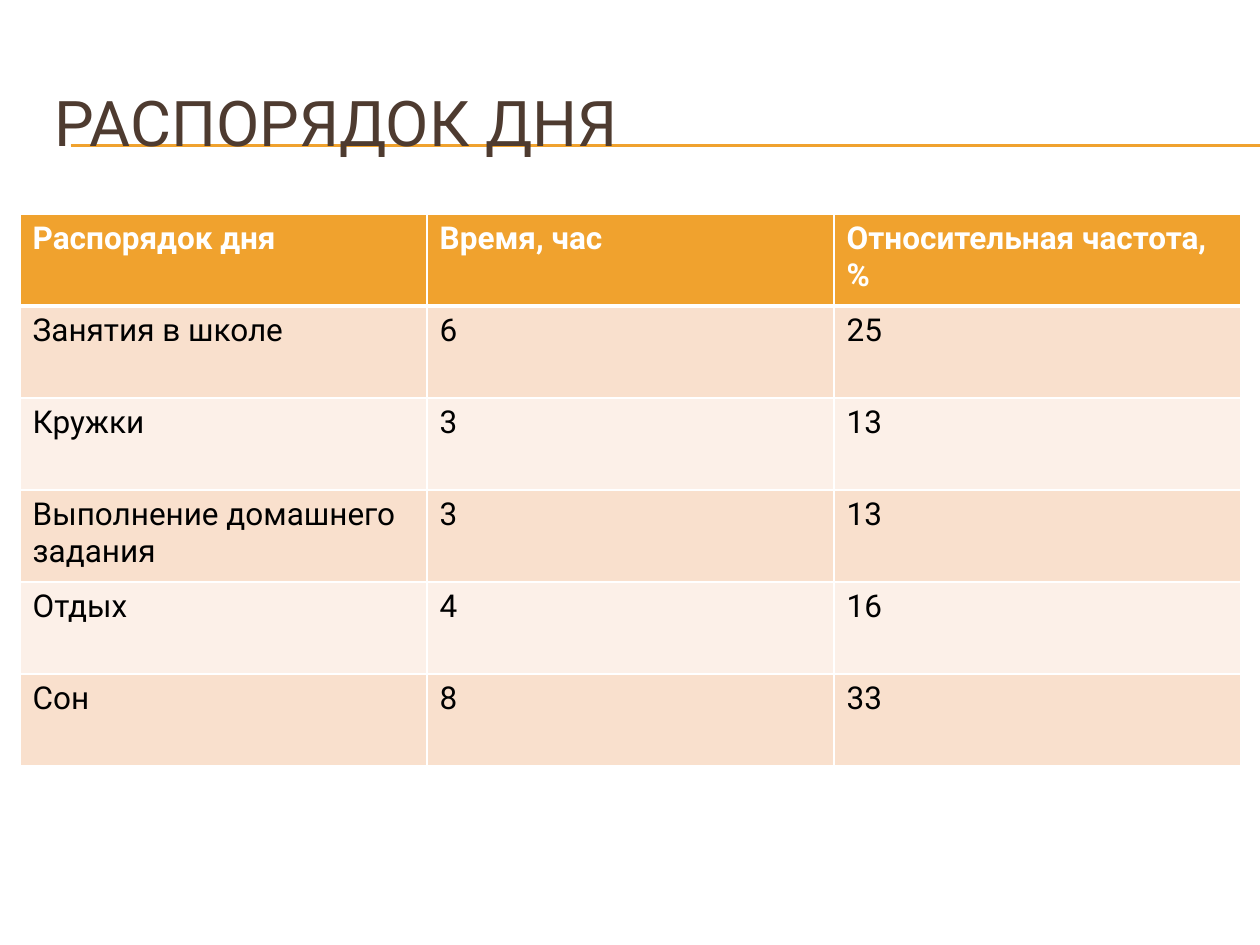
from lxml import etree
from pptx import Presentation
from pptx.dml.color import RGBColor
from pptx.enum.shapes import MSO_CONNECTOR
from pptx.enum.text import MSO_ANCHOR, PP_ALIGN
from pptx.oxml.ns import qn
from pptx.util import Inches, Pt

STRAIGHT = MSO_CONNECTOR.STRAIGHT
MIDDLE, LEFT = MSO_ANCHOR.MIDDLE, PP_ALIGN.LEFT

TITLE = "РАСПОРЯДОК ДНЯ"
ROWS = [
    ("Распорядок дня", "Время, час", "Относительная частота, %"),
    ("Занятия в школе", "6", "25"),
    ("Кружки", "3", "13"),
    ("Выполнение домашнего задания", "3", "13"),
    ("Отдых", "4", "16"),
    ("Сон", "8", "33"),
]

COLORS = {
    "accent": "F0A22E",
    "title": "4E3B30",
    "white": "FFFFFF",
    "text": "000000",
    "odd": "F9E0CD",
    "even": "FCF0E8",
}
TITLE_FONT = {"name": "Roboto", "size": Pt(36), "bold": False}
HEADER_FONT = {"name": "Roboto", "size": Pt(18), "bold": True}
BODY_FONT = {**HEADER_FONT, "bold": False}

TITLE_BOX = (0.33, 0.5, 9.5, 0.92)
RULE_LEFT, RULE_RIGHT, RULE_YS = 0.56, 10, (1.15, 1.16)
TABLE_LEFT, TABLE_TOP = 0.16, 1.7
COL_WIDTH, ROW_HEIGHT = 3.23, 0.73
THIN, THICK = Pt(1), Pt(3)


def rgb(name):
    return RGBColor.from_string(COLORS[name])


def write(tf, text, font, color):
    p = tf.paragraphs[0]
    p.alignment = LEFT
    r = p.add_run()
    r.text = text
    for key, value in font.items():
        setattr(r.font, key, value)
    r.font.color.rgb = rgb(color)


def add_title(s):
    title = s.shapes.title
    title.left, title.top, title.width, title.height = map(Inches, TITLE_BOX)
    title.text_frame.vertical_anchor = MIDDLE
    title.text_frame.word_wrap = True
    write(title.text_frame, TITLE, TITLE_FONT, "title")


def add_rule(s, y):
    """Draw a horizontal line behind the title."""
    line = s.shapes.add_connector(
        STRAIGHT, Inches(RULE_LEFT), Inches(y), Inches(RULE_RIGHT), Inches(y))
    line.line.color.rgb = rgb("accent")
    line.line.width = Pt(0.75)
    etree.SubElement(line.element.spPr, qn("a:effectLst"))
    s.shapes.title.element.addprevious(line.element)


def set_borders(cell, top, bottom):
    tcPr = cell._tc.get_or_add_tcPr()
    widths = {"a:lnL": THIN, "a:lnR": THIN, "a:lnT": top, "a:lnB": bottom}
    for tag, width in widths.items():
        ln = etree.SubElement(tcPr, qn(tag), w=str(width))
        fill = etree.SubElement(ln, qn("a:solidFill"))
        etree.SubElement(fill, qn("a:srgbClr"), val=COLORS["white"])


def add_schedule(s):
    n_rows, n_cols = len(ROWS), len(ROWS[0])
    table = s.shapes.add_table(
        n_rows, n_cols, Inches(TABLE_LEFT), Inches(TABLE_TOP),
        Inches(COL_WIDTH * n_cols), Inches(ROW_HEIGHT * n_rows)).table
    for col in table.columns:
        col.width = Inches(COL_WIDTH)
    for i, values in enumerate(ROWS):
        table.rows[i].height = Inches(ROW_HEIGHT)
        if i == 0:
            font, color, fill = HEADER_FONT, "white", "accent"
        else:
            font, color, fill = BODY_FONT, "text", "odd" if i % 2 else "even"
        for j, value in enumerate(values):
            cell = table.cell(i, j)
            set_borders(cell, top=THICK if i == 1 else THIN,
                        bottom=THICK if i == 0 else THIN)
            cell.fill.solid()
            cell.fill.fore_color.rgb = rgb(fill)
            write(cell.text_frame, value, font, color)


def main():
    prs = Presentation()
    prs.slide_width, prs.slide_height = Inches(10), Inches(7.5)
    s = prs.slides.add_slide(prs.slide_layouts[5])
    add_title(s)
    for y in RULE_YS:
        add_rule(s, y)
    add_schedule(s)
    prs.save("out.pptx")


if __name__ == "__main__":
    main()
